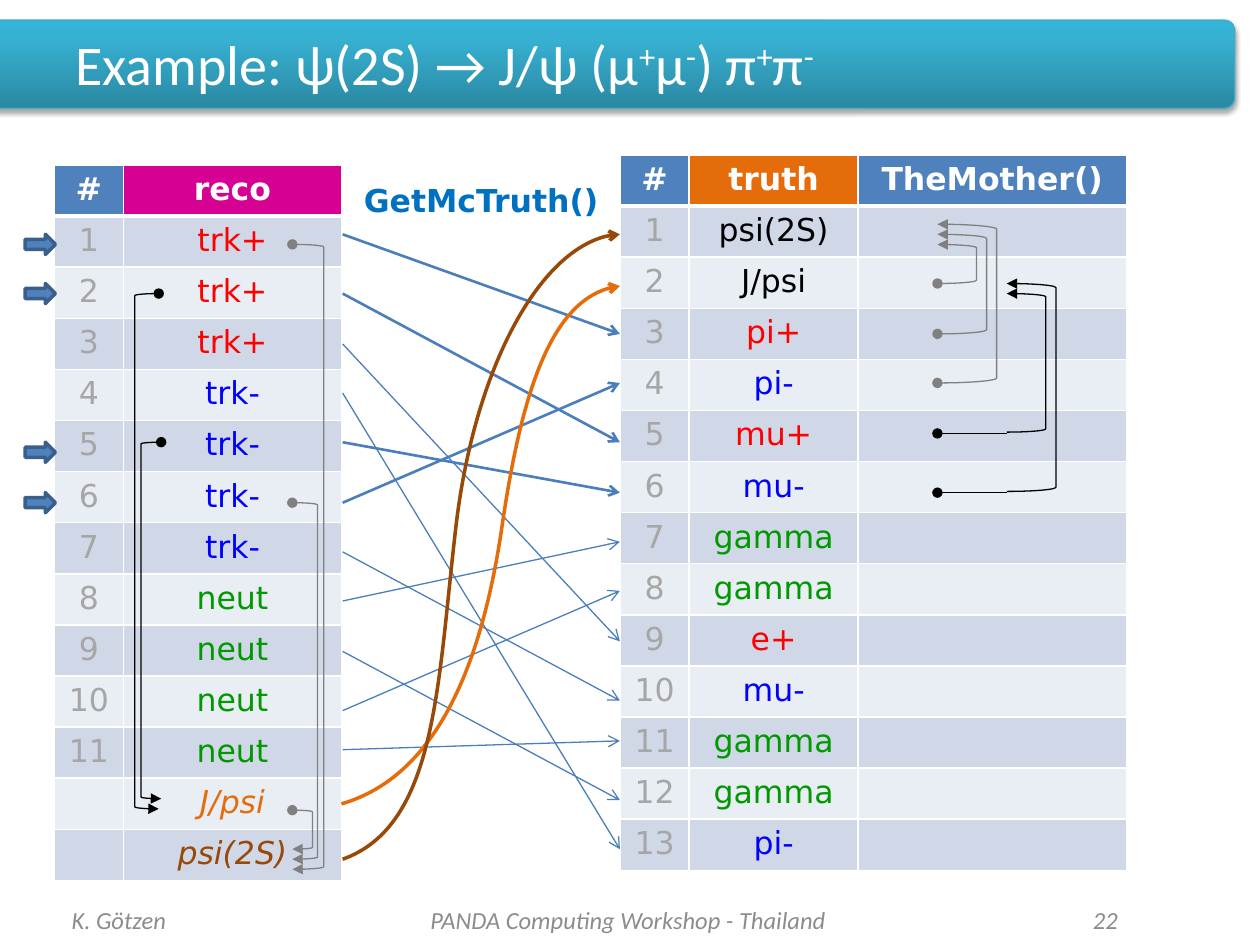
from dataclasses import dataclass

from lxml import etree
from pptx import Presentation
from pptx.dml.color import RGBColor
from pptx.enum import shapes, text
from pptx.oxml import parse_xml
from pptx.oxml.ns import nsdecls, qn
from pptx.util import Inches, Pt


@dataclass(frozen=True)
class Theme:
    body: str = "Calibri"
    table: str = "DejaVu Sans"
    title_size: int = 32
    table_size: int = 18
    foot_size: int = 14
    white: str = "FFFFFF"
    black: str = "000000"
    gray: str = "808080"
    number: str = "A6A6A6"
    foot: str = "8C8C8C"
    blue: str = "4F81BD"
    arrow_edge: str = "3A5F8C"
    link: str = "4B7EBC"
    label: str = "0070C0"
    pink: str = "D60093"
    orange: str = "E46C0A"
    brown: str = "984807"
    plus: str = "FF0000"
    minus: str = "0000FF"
    neutral: str = "009900"
    bands: tuple = ("D0D8E8", "E9EDF4")
    banner: tuple = ((0, "2A88A2"), (80, "37B1D2"), (100, "34B4D6"))
    banner_edge: str = "46AAC5"


T = Theme()
PLAIN, LEFT, CENTER, RIGHT = None, text.PP_ALIGN.LEFT, text.PP_ALIGN.CENTER, text.PP_ALIGN.RIGHT


def write(p, value, size=T.table_size, font=T.table, color=T.white,
          bold=False, italic=False, align=CENTER, raised=False):
    p.alignment = align
    r = p.add_run()
    r.text = value
    r.font.size, r.font.name = Pt(size), font
    r.font.bold, r.font.italic = bold, italic
    r.font.color.rgb = RGBColor.from_string(color)
    if raised:
        r._r.get_or_add_rPr().set("baseline", "30000")


def particle_style(name):
    """Colour a particle by its charge."""
    if name in ("neut", "gamma"):
        return {"color": T.neutral}
    return {"color": {"+": T.plus, "-": T.minus}.get(name[-1], T.black)}


class SlideBuilder:
    def __init__(self, slide):
        self.shapes = slide.shapes

    def style(self, sp, fill, line, width, head=None, tail=None):
        """Set fill, line, line ends and no shadow."""
        if fill:
            sp.fill.solid()
            sp.fill.fore_color.rgb = RGBColor.from_string(fill)
        elif hasattr(sp, "fill"):
            sp.fill.background()
        sp.line.color.rgb = RGBColor.from_string(line)
        sp.line.width = Pt(width)
        for tag, end in (("a:headEnd", head), ("a:tailEnd", tail)):
            if end:
                etree.SubElement(sp.line._get_or_add_ln(), qn(tag), type=end)
        if hasattr(sp, "shadow"):
            sp.shadow.inherit = False
        if sp._element.spPr.find(qn("a:effectLst")) is None:
            etree.SubElement(sp._element.spPr, qn("a:effectLst"))

    def shape(self, kind, box, fill, line, width, flip="", **ends):
        sp = self.shapes.add_shape(kind, *map(Inches, box))
        self.style(sp, fill, line, width, **ends)
        for axis in flip:
            sp._element.spPr.xfrm.set("flip" + axis, "1")
        return sp

    def banner(self, box):
        sp = self.shape(shapes.MSO_SHAPE.ROUNDED_RECTANGLE, box, T.blue, T.banner_edge, 0.75)
        sp.adjustments[0] = 0.12
        stops = "".join(f'<a:gs pos="{pos * 1000}"><a:srgbClr val="{c}"/></a:gs>'
                        for pos, c in T.banner)
        pr = sp._element.spPr
        pr.replace(pr.find(qn("a:solidFill")), parse_xml(
            f'<a:gradFill {nsdecls("a")} rotWithShape="1"><a:gsLst>{stops}</a:gsLst>'
            '<a:lin ang="16200000" scaled="0"/></a:gradFill>'))
        pr.find(qn("a:effectLst")).append(parse_xml(
            f'<a:outerShdw {nsdecls("a")} blurRad="{Pt(3.1)}" dist="{Pt(1.8)}" dir="5400000" '
            'rotWithShape="0"><a:srgbClr val="000000"><a:alpha val="35000"/></a:srgbClr>'
            '</a:outerShdw>'))

    def text(self, box, runs, wrap=True, anchor=text.MSO_ANCHOR.MIDDLE, **fmt):
        """Runs alternate between normal and raised text."""
        tf = self.shapes.add_textbox(*map(Inches, box)).text_frame
        tf.word_wrap, tf.vertical_anchor = wrap, anchor
        if not wrap:
            tf.auto_size = text.MSO_AUTO_SIZE.SHAPE_TO_FIT_TEXT
        for i, value in enumerate(runs):
            write(tf.paragraphs[0], value, raised=i % 2 == 1, **fmt)

    def cell(self, cell, value, fill, top, bottom, **fmt):
        for side, width in (("L", 1), ("R", 1), ("T", top), ("B", bottom)):
            cell._tc.get_or_add_tcPr().append(parse_xml(
                f'<a:ln{side} {nsdecls("a")} w="{Pt(width)}"><a:solidFill>'
                f'<a:srgbClr val="{T.white}"/></a:solidFill></a:ln{side}>'))
        cell.fill.solid()
        cell.fill.fore_color.rgb = RGBColor.from_string(fill)
        if value:
            write(cell.text_frame.paragraphs[0], value, **fmt)

    def table(self, left, top, widths, header, rows):
        """Header holds (text, fill); rows hold (number, name, format)."""
        count, height = len(rows) + 1, 5.68
        table = self.shapes.add_table(count, len(widths), Inches(left), Inches(top),
                                      Inches(sum(widths)), Inches(height)).table
        for col, width in zip(table.columns, widths):
            col.width = Inches(width)
        for row in table.rows:
            row.height = Inches(height / count)
        for c, (value, fill) in enumerate(header):
            self.cell(table.cell(0, c), value, fill, 1, 3, bold=True)
        for r, (number, name, fmt) in enumerate(rows, 1):
            values = [(number, {"color": T.number}), (name, fmt), ("", {})]
            for c, (value, cell_fmt) in enumerate(values[:len(widths)]):
                self.cell(table.cell(r, c), value, T.bands[(r - 1) % 2],
                          3 if r == 1 else 1, 1, **cell_fmt)

    def line(self, x1, y1, x2, y2, color, width, tail):
        cxn = self.shapes.add_connector(shapes.MSO_CONNECTOR.STRAIGHT,
                                        *map(Inches, (x1, y1, x2, y2)))
        self.style(cxn, None, color, width, tail=tail)

    def bracket(self, box, color, flip="", tail="oval"):
        self.shape(shapes.MSO_SHAPE.RIGHT_BRACKET, box, None, color, 0.75,
                   flip=flip, head="triangle", tail=tail)

    def curve(self, start, points, color):
        """Turn each three points after the start into one Bézier segment."""
        fb = self.shapes.build_freeform(*map(Inches, start), scale=1.0)
        fb.add_line_segments([(Inches(x), Inches(y)) for x, y in points], close=False)
        sp = fb.convert_to_shape()
        self.style(sp, None, color, 2, tail="arrow")
        steps = list(sp._element.iter(qn("a:lnTo")))
        for i in range(0, len(steps), 3):
            bezier = etree.Element(qn("a:cubicBezTo"))
            steps[i].addprevious(bezier)
            for step in steps[i:i + 3]:
                bezier.append(step[0])
                step.getparent().remove(step)


def main():
    prs = Presentation()
    prs.slide_width, prs.slide_height = Inches(10), Inches(7.5)
    s = SlideBuilder(prs.slides.add_slide(prs.slide_layouts[6]))
    s.banner((-0.12, 0.16, 9.92, 0.7))

    # Reconstructed and true particles
    reco = ["trk+"] * 3 + ["trk-"] * 4 + ["neut"] * 4
    truth = ["psi(2S)", "J/psi", "pi+", "pi-", "mu+", "mu-", "gamma", "gamma",
             "e+", "mu-", "gamma", "gamma", "pi-"]
    reco_rows, truth_rows = ([(str(i), name, particle_style(name))
                              for i, name in enumerate(names, 1)] for names in (reco, truth))
    reco_rows += [("", "J/psi", {"color": T.orange, "italic": True}),
                  ("", "psi(2S)", {"color": T.brown, "italic": True})]
    s.table(0.43, 1.31, (0.55, 1.73), [("#", T.blue), ("reco", T.pink)], reco_rows)
    s.table(4.92, 1.23, (0.55, 1.34, 2.13),
            [("#", T.blue), ("truth", T.orange), ("TheMother()", T.blue)], truth_rows)

    # Title
    s.text((0.5, 0.18, 9, 0.64),
           ["Example: ψ(2S) → J/ψ (μ", "+", "μ", "-", ") π", "+", "π", "-"],
           size=T.title_size, font=T.body, align=LEFT)

    # Truth matches
    for y1, y2, width in ((1.86, 2.65, 1.5), (2.33, 3.51, 1.5), (3.12, 6.74, 0.75),
                          (2.73, 5.09, 0.75), (3.51, 3.91, 1.5), (3.99, 3.04, 1.5),
                          (4.38, 5.56, 0.75), (4.77, 4.3, 0.75), (5.17, 6.35, 0.75),
                          (5.64, 4.69, 0.75), (5.95, 5.88, 0.75)):
        s.line(2.72, y1, 4.92, y2, T.link, width, "arrow")

    # Markers of the selected tracks
    for y in (1.86, 2.25, 3.51, 3.91):
        s.shape(shapes.MSO_SHAPE.RIGHT_ARROW, (0.2, y, 0.24, 0.16), T.blue, T.arrow_edge, 2)
    s.text((2.79, 1.39, 2.13, 0.4), ["GetMcTruth()"], wrap=False,
           anchor=text.MSO_ANCHOR.TOP, color=T.label, bold=True, align=LEFT)

    # Mother links in the truth table
    for y, w, h in ((1.94, 0.31, 0.31), (1.86, 0.39, 0.79), (1.78, 0.47, 1.26)):
        s.bracket((7.44, y, w, h), T.gray)
    for y, w, h in ((2.25, 0.39, 1.65), (2.33, 0.31, 1.1)):
        s.bracket((7.99, y, w, h), T.black, tail=None)
    for y in (3.44, 3.91):
        s.line(7.99, y, 7.44, y, T.black, 0.75, "oval")

    # Daughter links in the reco table
    for box in ((1.07, 2.33, 0.19, 4.09), (1.12, 3.51, 0.16, 2.83)):
        s.bracket(box, T.black, flip="HV")
    for y, w, h in ((3.99, 0.2, 2.83), (6.43, 0.16, 0.31), (1.94, 0.25, 4.96)):
        s.bracket((2.32, y, w, h), T.gray, flip="V")

    # Matches of the composites
    s.curve((2.71, 6.38), [(3.47, 6.16), (3.82, 5.27), (3.98, 4.21),
                           (4.13, 3.17), (4.38, 2.33), (4.92, 2.27)], T.orange)
    s.curve((2.72, 6.82), [(3.47, 6.55), (3.47, 5.44), (3.62, 4.17),
                           (3.77, 2.91), (4.34, 1.88), (4.92, 1.86)], T.brown)

    # Footer
    for x, w, value, align in ((0.47, 2.33, "K. Götzen", LEFT),
                               (3.03, 3.91, "PANDA Computing Workshop - Thailand", CENTER),
                               (7.5, 1.47, "22", RIGHT)):
        s.text((x, 7.1, w, 0.4), [value], size=T.foot_size, font=T.body,
               color=T.foot, italic=True, align=align)

    prs.save("out.pptx")


if __name__ == "__main__":
    main()
